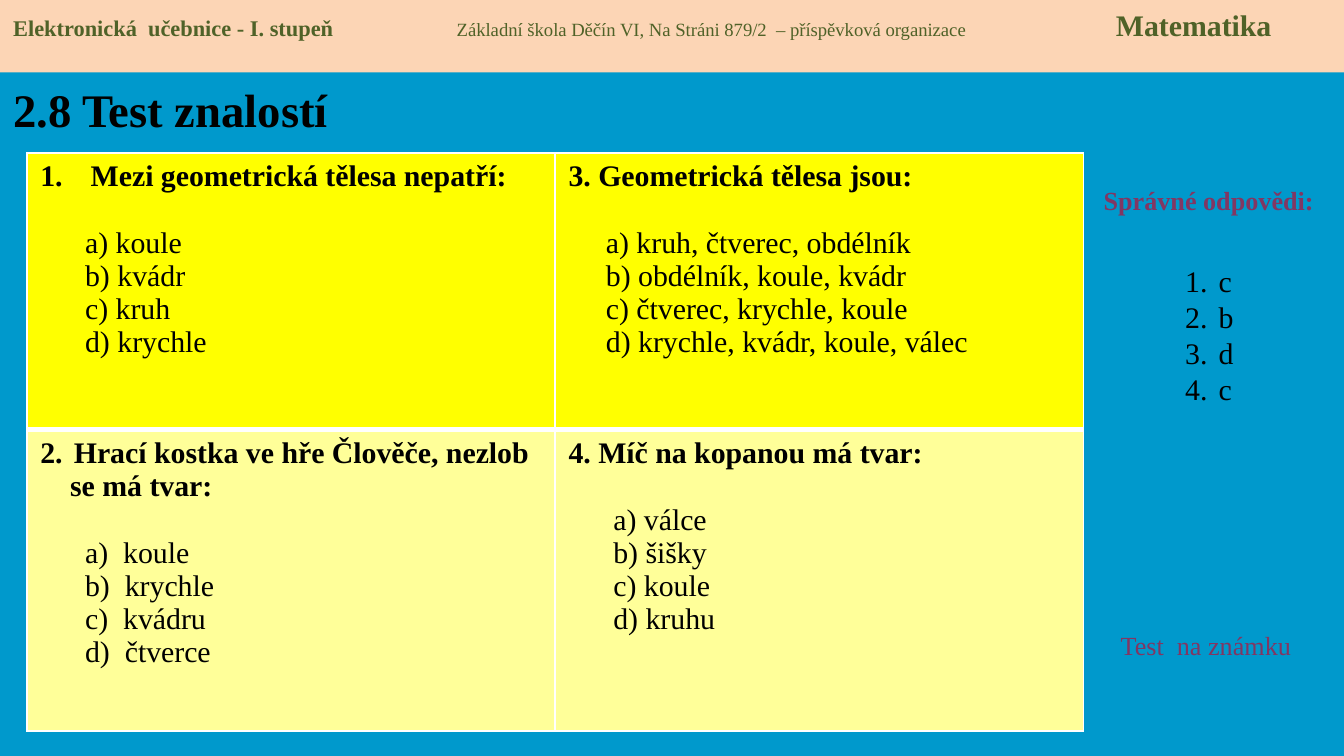
from lxml import etree
from pptx import Presentation
from pptx import util as u
from pptx.dml import color
from pptx.enum import shapes, text
from pptx.oxml import ns

Pt = u.Pt
BLACK, PLUM, GREEN = "000000", "813763", "4F6228"


def rgb(value):
    return color.RGBColor.from_string(value)


def sub(parent, tag, **attrs):
    return etree.SubElement(parent, ns.qn(tag), {k: str(v) for k, v in attrs.items()})


class Deck:
    font = "Times New Roman"

    def __init__(self, width, height):
        self.prs = Presentation()
        self.prs.slide_width, self.prs.slide_height = Pt(width), Pt(height)
        self.s = self.prs.slides.add_slide(self.prs.slide_layouts[6])

    def background(self, value):
        fill = self.s.background.fill
        fill.solid()
        fill.fore_color.rgb = rgb(value)

    def run(self, p, words, size=16, hue=BLACK, bold=False):
        r = p.add_run()
        r.text = words
        r.font.name, r.font.size, r.font.bold = self.font, Pt(size), bold
        r.font.color.rgb = rgb(hue)

    def indent(self, p, left, number=None):
        """Indent a paragraph; with a number, hang it as a numbered item."""
        pPr = p._p.get_or_add_pPr()
        pPr.set("marL", str(Pt(left)))
        if number:
            pPr.set("indent", str(-Pt(left)))
            sub(pPr, "a:buFont", typeface="+mj-lt")
            sub(pPr, "a:buAutoNum", type="arabicPeriod", startAt=number)

    def box(self, x, y, w, h, wrap=True):
        tf = self.s.shapes.add_textbox(Pt(x), Pt(y), Pt(w), Pt(h)).text_frame
        tf.word_wrap = wrap
        tf.auto_size = text.MSO_AUTO_SIZE.SHAPE_TO_FIT_TEXT
        return tf

    def label(self, x, y, w, h, words, size, hue, bold=False, wrap=True, align=None):
        tf = self.box(x, y, w, h, wrap)
        tf.paragraphs[0].alignment = align
        self.run(tf.paragraphs[0], words, size, hue, bold)
        return tf

    def band(self, w, h, fill, parts, tabs):
        """Header band whose parts are set at tab stops."""
        sp = self.s.shapes.add_shape(shapes.MSO_SHAPE.RECTANGLE, 0, 0, Pt(w), Pt(h))
        sp.shadow.inherit = False
        sp.fill.solid()
        sp.fill.fore_color.rgb = rgb(fill)
        sp.line.fill.background()
        tf = sp.text_frame
        tf.vertical_anchor = text.MSO_ANCHOR.TOP
        p = tf.paragraphs[0]
        p.alignment = text.PP_ALIGN.LEFT
        stops = sub(p._p.get_or_add_pPr(), "a:tabLst")
        for pos in tabs:
            sub(stops, "a:tab", pos=Pt(pos), algn="l")
        for i, (words, size, bold) in enumerate(parts):
            self.run(p, "\t" * (i > 0) + words, size, GREEN, bold)

    def numbered(self, x, y, w, h, items, left, top):
        tf = self.box(x, y, w, h)
        tf.margin_top = Pt(top)
        for i, item in enumerate(items):
            p = tf.add_paragraph() if i else tf.paragraphs[0]
            self.indent(p, left, 1)
            self.run(p, item)

    def question(self, cell, heading, left, options, number=None, hang=0, more=None):
        """Bold question, then its options one blank line below."""
        tf = cell.text_frame
        p = tf.paragraphs[0]
        if number:
            self.indent(p, hang, number)
        self.run(p, heading, bold=True)
        if more:
            p = tf.add_paragraph()
            self.indent(p, 16)
            self.run(p, more, bold=True)
        for i, option in enumerate(options):
            p = tf.add_paragraph()
            self.indent(p, left)
            if i == 0:
                p.space_before = Pt(18)
            self.run(p, option)

    def borders(self, cell, top, bottom):
        tcPr = cell._tc.get_or_add_tcPr()
        widths = {"a:lnL": 1, "a:lnR": 1, "a:lnT": top, "a:lnB": bottom}
        for i, (tag, width) in enumerate(widths.items()):
            ln = etree.Element(ns.qn(tag), w=str(Pt(width)))
            sub(sub(ln, "a:solidFill"), "a:srgbClr", val="FFFFFF")
            tcPr.insert(i, ln)

    def quiz(self, x, y, w, heights, fills, questions):
        frame = self.s.shapes.add_table(2, 2, Pt(x), Pt(y), Pt(w), Pt(sum(heights)))
        table = frame.table
        for row, height in enumerate(heights):
            table.rows[row].height = Pt(height)
            for col in range(2):
                cell = table.cell(row, col)
                cell.fill.solid()
                cell.fill.fore_color.rgb = rgb(fills[row])
                self.borders(cell, *((1, 3), (3, 1))[row])
                self.question(cell, **questions[row][col])


deck = Deck(720, 405)
deck.background("0099CC")

# Title and answer heading
deck.label(0, 39.6, 185, 37.4, "2.8 Test znalostí", 25, BLACK, True,
           wrap=False).vertical_anchor = text.MSO_ANCHOR.MIDDLE
deck.label(579.6, 95, 136, 24.5, "Správné odpovědi:", 14, PLUM, True,
           align=text.PP_ALIGN.CENTER)

# Quiz table
deck.quiz(14.4, 82, 566, (148.3, 161.3), ("FFFF00", "FFFF99"), [
    [dict(heading="Mezi geometrická tělesa nepatří:", number=1, hang=27, left=24,
          options=["a) koule", "b) kvádr", "c) kruh", "d) krychle"]),
     dict(heading="3. Geometrická tělesa jsou:", left=20,
          options=["a) kruh, čtverec, obdélník", "b) obdélník, koule, kvádr",
                   "c) čtverec, krychle, koule", "d) krychle, kvádr, koule, válec"])],
    [dict(heading="Hrací kostka ve hře Člověče, nezlob", number=2, hang=18, left=24,
          more="se má tvar:",
          options=["a)  koule", "b)  krychle", "c)  kvádru", "d)  čtverce"]),
     dict(heading="4. Míč na kopanou má tvar:", left=24,
          options=["a) válce", "b) šišky", "c) koule", "d) kruhu"])],
])

# Answers and link caption
deck.numbered(627.8, 118.8, 39.6, 143.3, "cbdc", left=18, top=22)
deck.label(593.3, 333.4, 113, 24.5, "Test  na známku", 14, PLUM)

# Header band
deck.band(720, 38.9, "FCD5B5", [
    ("Elektronická  učebnice - I. stupeň", 12, True),
    ("Základní škola Děčín VI, Na Stráni 879/2  – příspěvková organizace", 10, False),
    ("Matematika", 16, True),
], tabs=(237.6, 590.8))

deck.prs.save("out.pptx")
